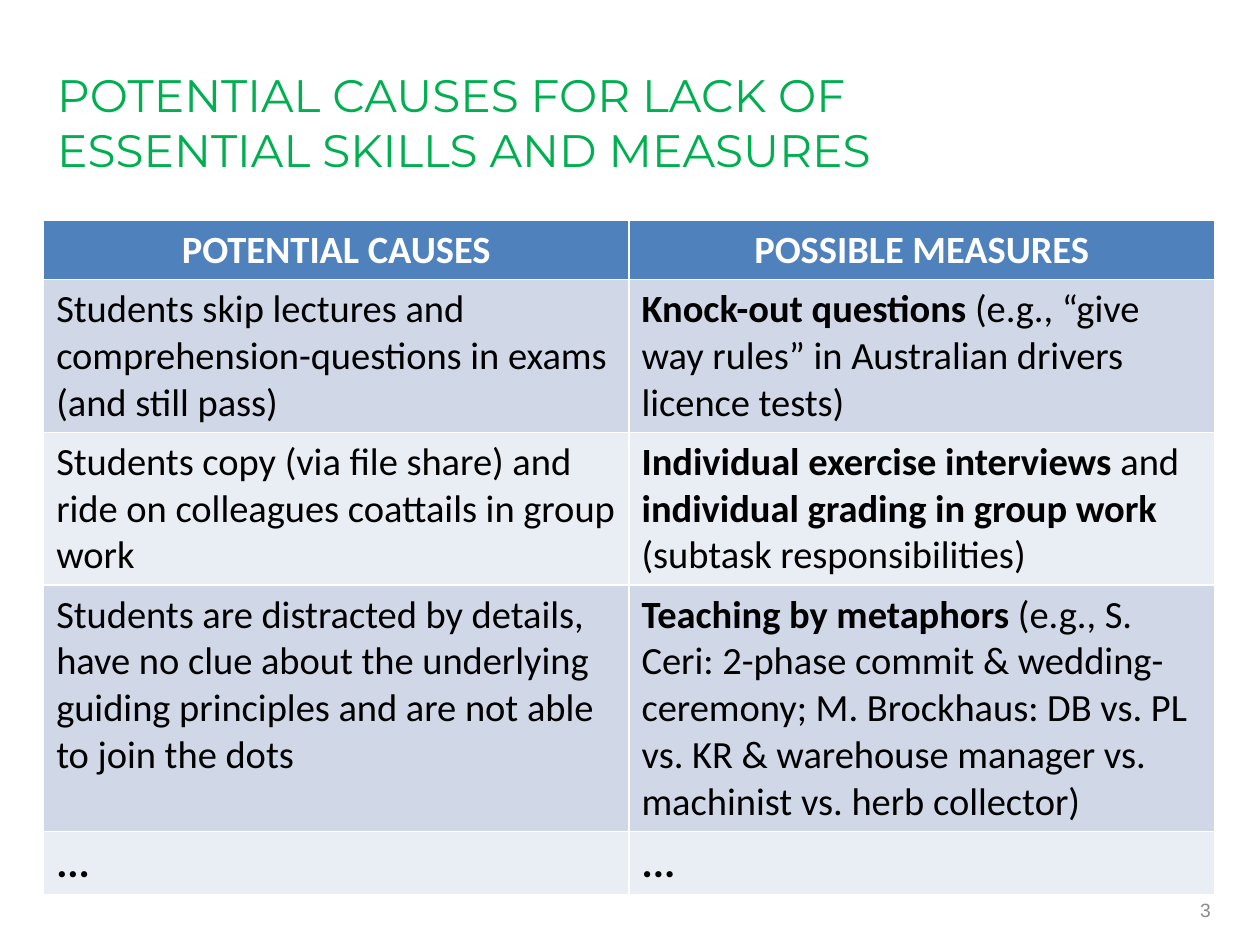
import pptx
import pptx.util
import pptx.dml.color
import pptx.enum.text

Cm = pptx.util.Cm
RGBColor = pptx.dml.color.RGBColor
ALIGN = pptx.enum.text.PP_ALIGN
ANCHOR = pptx.enum.text.MSO_ANCHOR

GREEN = RGBColor(0x00, 0xB0, 0x50)
GREY = RGBColor(0x8C, 0x8C, 0x8C)
BLACK = RGBColor(0x00, 0x00, 0x00)
WHITE = RGBColor(0xFF, 0xFF, 0xFF)
HEADER_BLUE = RGBColor(0x4F, 0x81, 0xBD)
BANDS = [RGBColor(0xD0, 0xD8, 0xE8), RGBColor(0xE9, 0xED, 0xF4)]

HEADINGS = ["POTENTIAL CAUSES", "POSSIBLE MEASURES"]
# Each cell is a list of (text, bold) spans
ROWS = [
    [[("Students skip lectures and comprehension-questions in exams (and still pass)", False)],
     [("Knock-out questions ", True),
      ("(e.g., “give way rules” in Australian drivers licence tests)", False)]],
    [[("Students copy (via file share) and ride on colleagues coattails in group work", False)],
     [("Individual exercise interviews ", True), ("and ", False),
      ("individual grading in group work", True),
      (" (subtask responsibilities)", False)]],
    [[("Students are distracted by details, have no clue about the underlying "
       "guiding principles and are not able to join the dots", False)],
     [("Teaching by metaphors ", True),
      ("(e.g., S. Ceri: 2-phase commit & wedding-ceremony; M. Brockhaus: DB vs. PL "
       "vs. KR & warehouse manager vs. machinist vs. herb collector)", False)]],
    [[("...", True)], [("...", True)]],
]
ROW_HEIGHTS = [1.18, 3.08, 3.08, 4.97, 1.27]


def add_span(para, text, font="Calibri", size=22, color=BLACK, bold=False,
             align=ALIGN.LEFT):
    para.alignment = align
    span = para.add_run()
    span.text = text
    span.font.name = font
    span.font.size = pptx.util.Pt(size)
    span.font.color.rgb = color
    span.font.bold = bold


def place_title(page, left, top, width, height):
    title = page.shapes.title
    title.left, title.top, title.width, title.height = left, top, width, height
    frame = title.text_frame
    frame.word_wrap = True
    frame.auto_size = pptx.enum.text.MSO_AUTO_SIZE.NONE
    frame.vertical_anchor = ANCHOR.BOTTOM
    add_span(frame.paragraphs[0],
             "POTENTIAL CAUSES FOR LACK OF ESSENTIAL SKILLS AND MEASURES",
             font="Montserrat", size=26, color=GREEN)


def fill_cell(cell, color):
    cell.fill.solid()
    cell.fill.fore_color.rgb = color


def place_table(page, left, top, width):
    table = page.shapes.add_table(len(ROWS) + 1, len(HEADINGS), left, top, width,
                                  Cm(sum(ROW_HEIGHTS))).table
    for row, height in zip(table.rows, ROW_HEIGHTS):
        row.height = Cm(height)

    # Header row
    for column, heading in enumerate(HEADINGS):
        cell = table.cell(0, column)
        fill_cell(cell, HEADER_BLUE)
        add_span(cell.text_frame.paragraphs[0], heading, color=WHITE, bold=True,
                 align=ALIGN.CENTER)

    # Causes and measures, in alternating bands
    for index, contents in enumerate(ROWS):
        size = 24 if index == len(ROWS) - 1 else 22
        for column, spans in enumerate(contents):
            cell = table.cell(index + 1, column)
            fill_cell(cell, BANDS[index % 2])
            for text, bold in spans:
                add_span(cell.text_frame.paragraphs[0], text, size=size, bold=bold)


def place_page_number(page, left, top, width, height):
    box = page.shapes.add_textbox(left, top, width, height)
    frame = box.text_frame
    frame.word_wrap = True
    frame.vertical_anchor = ANCHOR.MIDDLE
    add_span(frame.paragraphs[0], "3", font="Arial", size=11, color=GREY,
             align=ALIGN.RIGHT)


def main():
    deck = pptx.Presentation()
    deck.slide_width, deck.slide_height = Cm(25.4), Cm(19.05)
    page = deck.slides.add_slide(deck.slide_layouts[5])
    place_page_number(page, Cm(23.24), Cm(17.83), Cm(1.42), Cm(1.02))
    place_title(page, Cm(0.9), Cm(0.92), Cm(19.2), Cm(2.76))
    place_table(page, Cm(0.88), Cm(4.45), Cm(23.6))
    deck.save("out.pptx")


if __name__ == "__main__":
    main()
